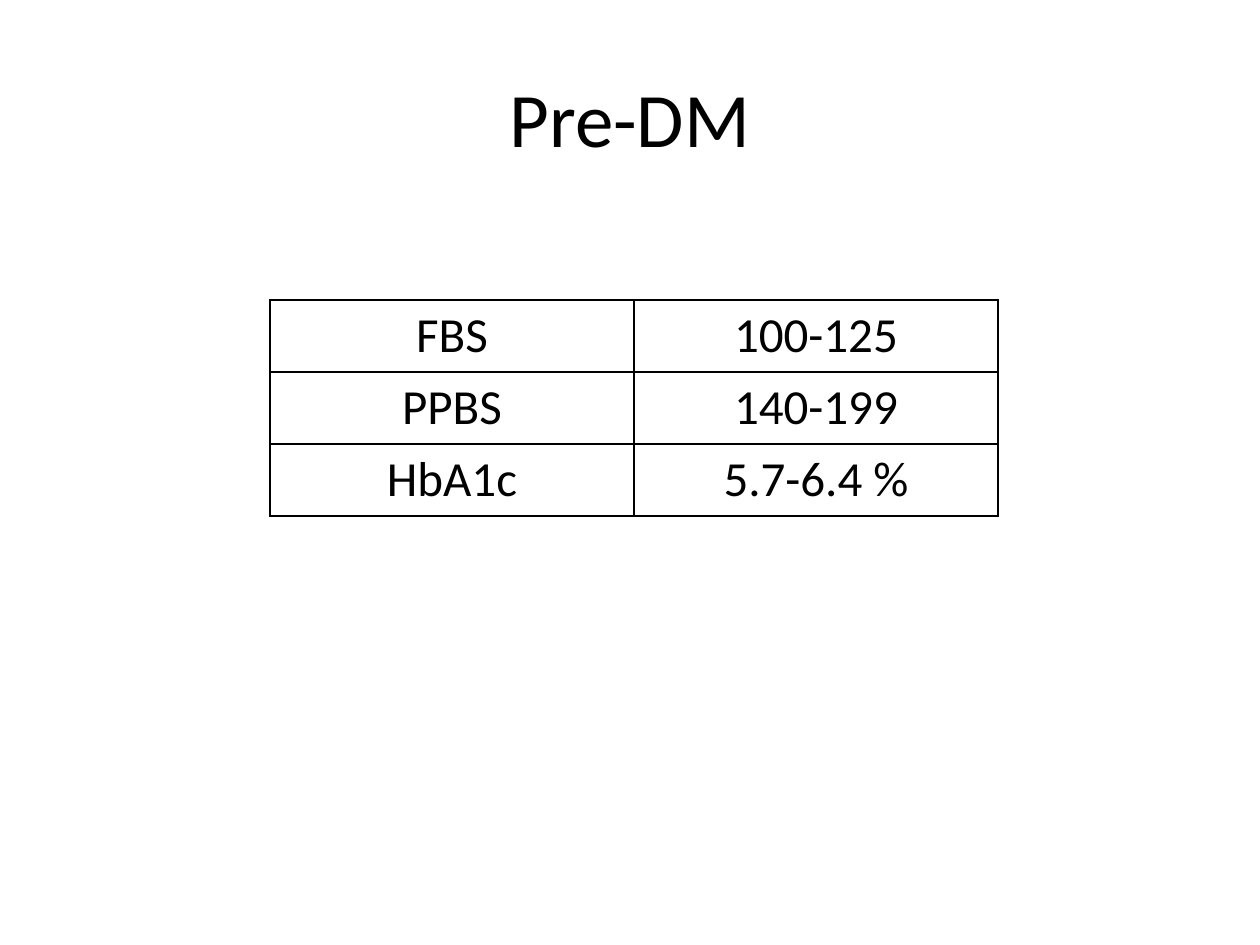
import pptx
import pptx.dml.color
import pptx.enum.text
import pptx.oxml
import pptx.oxml.ns
import pptx.util

# Content
TITLE = "Pre-DM"
RANGES = [
    ("FBS", "100-125"),
    ("PPBS", "140-199"),
    ("HbA1c", "5.7-6.4 %"),
]

# Layout in px, 126 to the inch
SLIDE_SIZE = (1260, 945)
TITLE_BOX = (63, 38, 1134, 158)
TABLE_LEFT, TABLE_TOP = 270, 300
COLUMN_WIDTH, ROW_HEIGHT = 364, 72

# Formats
BLACK = "000000"
TITLE_FONT = {"name": "Calibri", "size": pptx.util.Pt(44)}
CELL_FONT = {"name": "Calibri", "size": pptx.util.Pt(28), "bold": False}
BORDER_WIDTH = pptx.util.Pt(1)


def px(length):
    return round(length * 914400 / 126)


def color(value):
    return pptx.dml.color.RGBColor.from_string(value)


def write(text_frame, text, font_format):
    paragraph = text_frame.paragraphs[0]
    paragraph.alignment = pptx.enum.text.PP_ALIGN.CENTER
    run = paragraph.add_run()
    run.text = text
    for name, value in font_format.items():
        setattr(run.font, name, value)
    run.font.color.rgb = color(BLACK)


def add_borders(cell):
    properties = cell._tc.get_or_add_tcPr()
    for side in ("lnL", "lnR", "lnT", "lnB"):
        properties.append(pptx.oxml.parse_xml(
            f'<a:{side} {pptx.oxml.ns.nsdecls("a")} w="{BORDER_WIDTH}">'
            f'<a:solidFill><a:srgbClr val="{BLACK}"/></a:solidFill></a:{side}>'))


def main():
    presentation = pptx.Presentation()
    presentation.slide_width, presentation.slide_height = map(px, SLIDE_SIZE)
    slide = presentation.slides.add_slide(presentation.slide_layouts[6])

    # Title
    title = slide.shapes.add_textbox(*map(px, TITLE_BOX)).text_frame
    title.word_wrap = True
    title.vertical_anchor = pptx.enum.text.MSO_ANCHOR.MIDDLE
    write(title, TITLE, TITLE_FONT)

    # Table of ranges
    row_count, column_count = len(RANGES), len(RANGES[0])
    table = slide.shapes.add_table(
        row_count, column_count, px(TABLE_LEFT), px(TABLE_TOP),
        px(COLUMN_WIDTH * column_count), px(ROW_HEIGHT * row_count)).table
    table.first_row = table.horz_banding = False
    for row, texts in enumerate(RANGES):
        for column, text in enumerate(texts):
            cell = table.cell(row, column)
            add_borders(cell)
            cell.fill.background()
            write(cell.text_frame, text, CELL_FONT)

    presentation.save("out.pptx")


if __name__ == "__main__":
    main()
